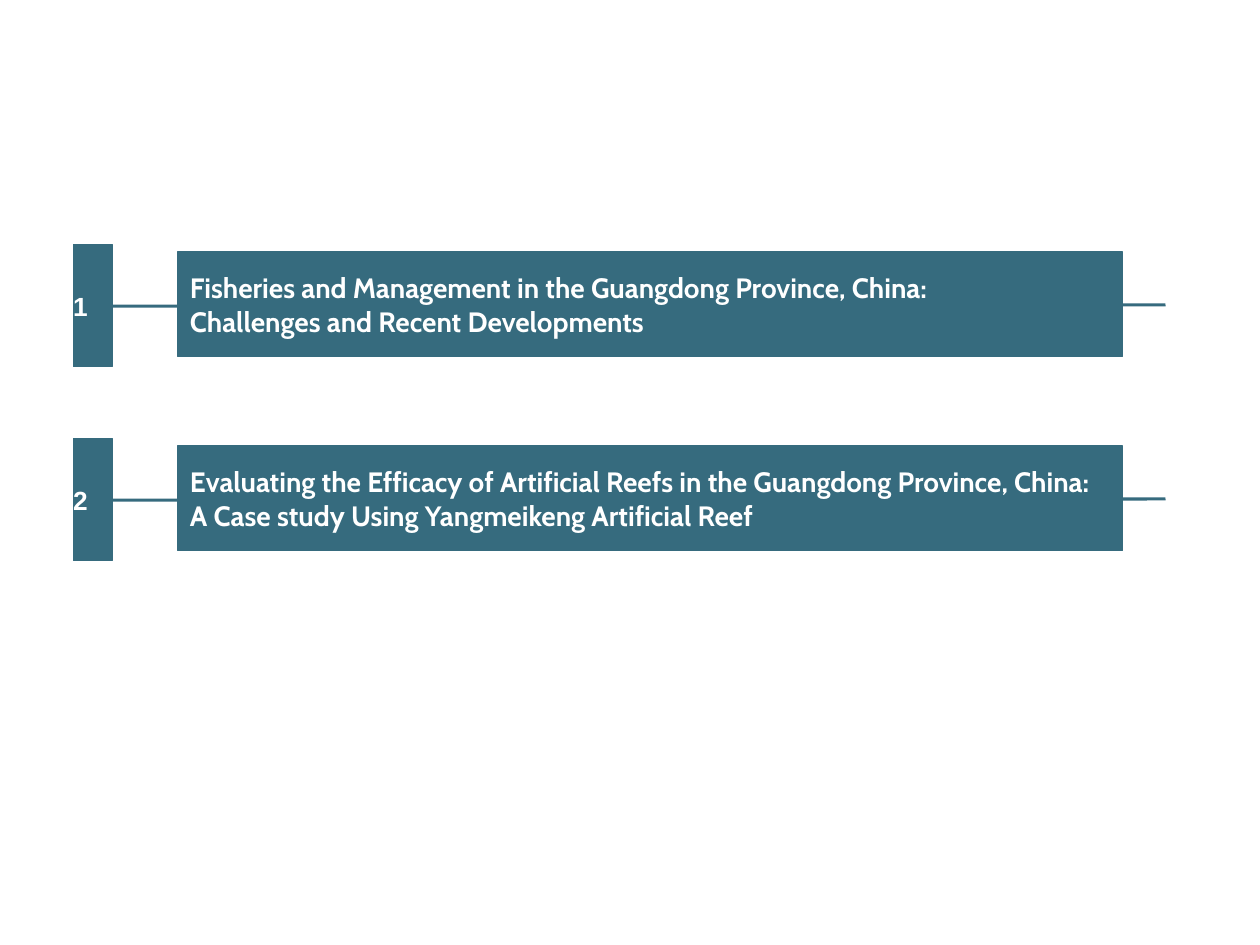
import dataclasses

import pptx
import pptx.dml.color
import pptx.enum.shapes
import pptx.enum.text
import pptx.shapes.autoshape
import pptx.shapes.group
import pptx.slide
import pptx.util
from pptx.util import Inches

COLORS = {"teal": "366B7E", "white": "FFFFFF"}


@dataclasses.dataclass
class Topic:
    number: str
    lines: list[str]


@dataclasses.dataclass
class BoxStyle:
    left: float
    offset: float
    width: float
    height: float
    border: float
    font: str
    size: int
    padded: bool


TOPICS = [
    Topic("1", ["Fisheries and Management in the Guangdong Province, China:",
                "Challenges and Recent Developments"]),
    Topic("2", ["Evaluating the Efficacy of Artificial Reefs in the Guangdong Province, China:",
                "A Case study Using Yangmeikeng Artificial Reef"]),
]
NUMBER_STYLE = BoxStyle(0.58, 0, 0.31, 0.97, 0.5, "Arial", 15, False)
TOPIC_STYLE = BoxStyle(1.41, 0.06, 7.5, 0.83, 0.75, "Cabin", 16, True)
FIRST_TOP = 1.94
ROW_PITCH = 1.54


def color(name: str) -> pptx.dml.color.RGBColor:
    return pptx.dml.color.RGBColor.from_string(COLORS[name])


def add_rule(group: pptx.shapes.group.GroupShape, top: float) -> None:
    rule = group.shapes.add_connector(
        pptx.enum.shapes.MSO_CONNECTOR.STRAIGHT,
        Inches(0.73), Inches(top + 0.49), Inches(9.25), Inches(top + 0.48))
    rule.line.color.rgb = color("teal")
    rule.line.width = pptx.util.Pt(1.75)
    properties = rule._element.spPr
    properties.append(properties.makeelement(pptx.oxml.ns.qn("a:effectLst"), {}))


def add_box(group: pptx.shapes.group.GroupShape, top: float,
            lines: list[str], style: BoxStyle) -> None:
    box = group.shapes.add_shape(
        pptx.enum.shapes.MSO_SHAPE.RECTANGLE, Inches(style.left),
        Inches(top + style.offset), Inches(style.width), Inches(style.height))
    box.shadow.inherit = False
    box.fill.solid()
    box.fill.fore_color.rgb = color("teal")
    box.line.color.rgb = color("teal")
    box.line.width = pptx.util.Pt(style.border)
    frame = box.text_frame
    frame.word_wrap = False
    frame.vertical_anchor = pptx.enum.text.MSO_ANCHOR.MIDDLE
    if not style.padded:
        frame.margin_left = frame.margin_right = 0
        frame.margin_top = frame.margin_bottom = 0
    frame.text = "\n".join(lines)
    for para in frame.paragraphs:
        para.alignment = pptx.enum.text.PP_ALIGN.LEFT
        for span in para.runs:
            span.font.name = style.font
            span.font.size = pptx.util.Pt(style.size)
            span.font.bold = True
            span.font.color.rgb = color("white")


def add_topic(page: pptx.slide.Slide, topic: Topic, top: float) -> None:
    group = page.shapes.add_group_shape()
    add_rule(group, top)
    add_box(group, top, [topic.number], NUMBER_STYLE)
    add_box(group, top, topic.lines, TOPIC_STYLE)


def main() -> None:
    deck = pptx.Presentation()
    deck.slide_width = Inches(10)
    deck.slide_height = Inches(7.5)
    page = deck.slides.add_slide(deck.slide_layouts[6])
    for index, topic in enumerate(TOPICS):
        add_topic(page, topic, FIRST_TOP + index * ROW_PITCH)
    deck.save("out.pptx")


if __name__ == "__main__":
    main()
